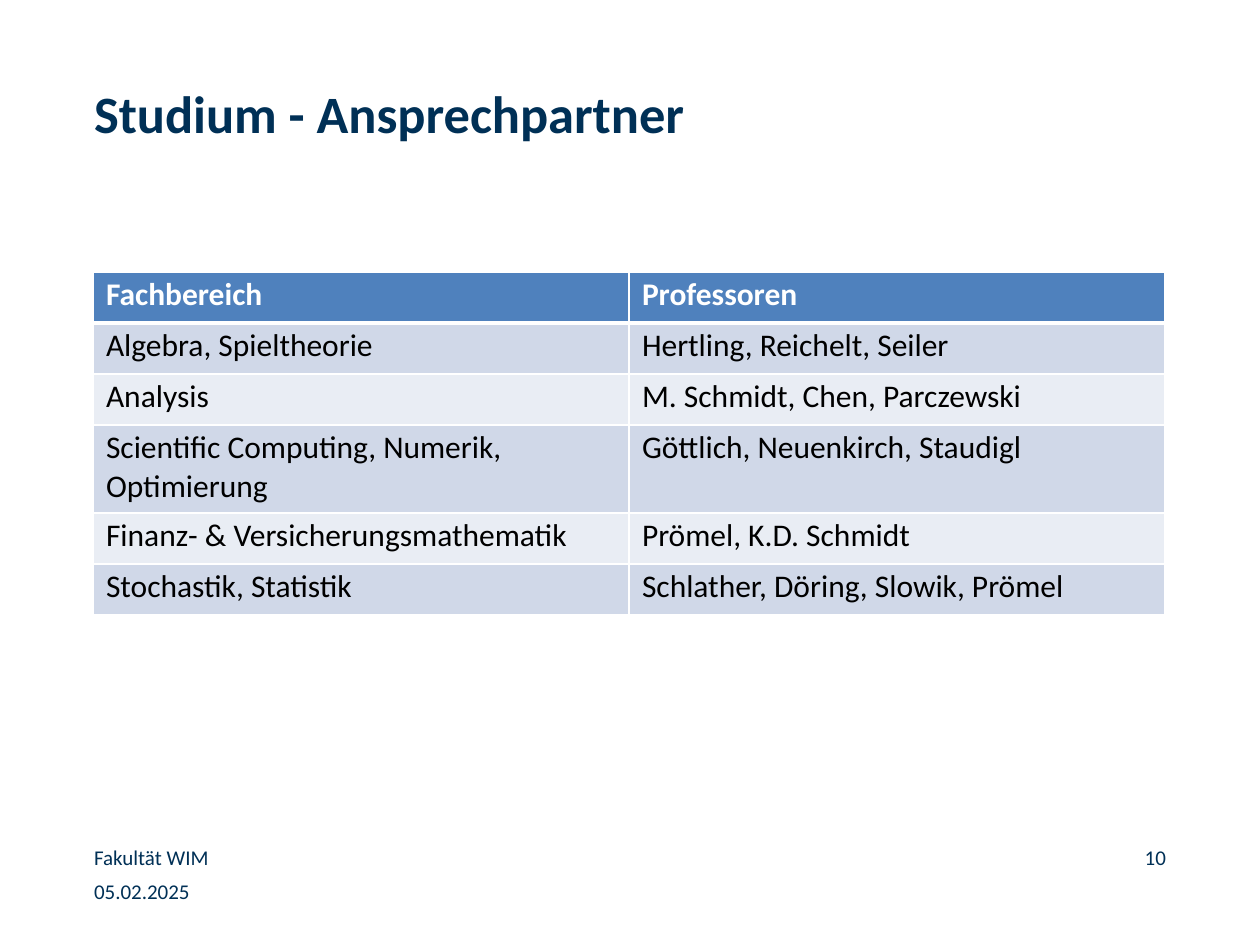
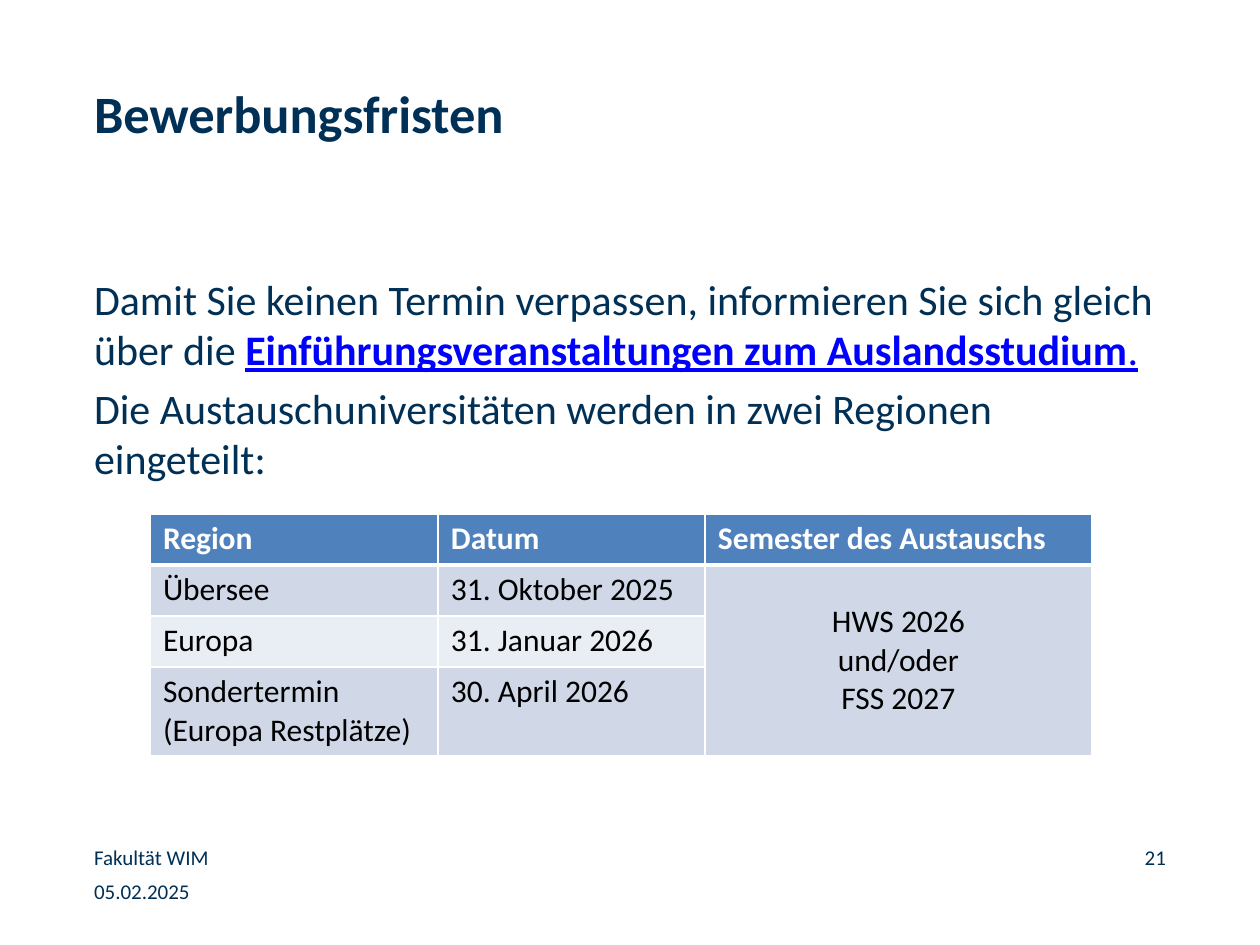
import pptx
import pptx.dml.color
import pptx.enum.text
import pptx.oxml
import pptx.oxml.ns
import pptx.util

RGBColor = pptx.dml.color.RGBColor
Align = pptx.enum.text.PP_ALIGN
Anchor = pptx.enum.text.MSO_ANCHOR
Pt = pptx.util.Pt

PX = 914400 / 126
FONT = "Calibri"
NAVY = RGBColor(0x00, 0x30, 0x56)
LINK_BLUE = RGBColor(0x00, 0x00, 0xFF)
HEADER_BLUE = RGBColor(0x4F, 0x81, 0xBD)
BAND_DARK = RGBColor(0xD0, 0xD8, 0xE8)
BAND_LIGHT = RGBColor(0xE9, 0xED, 0xF4)
WHITE = RGBColor(0xFF, 0xFF, 0xFF)
BLACK = RGBColor(0x00, 0x00, 0x00)

TITLE = {"size": Pt(30), "bold": True, "color": NAVY}
BODY = {"size": Pt(24), "color": NAVY}
LINK = {"size": Pt(24), "color": LINK_BLUE, "underline": True}
FOOTER = {"size": Pt(12), "color": NAVY}
HEADER_CELL = {"size": Pt(18), "bold": True, "color": WHITE}
BODY_CELL = {"size": Pt(18), "bold": False, "color": BLACK}

TITLE_AREA = (94, 81, 755, 157)
BODY_AREA = (94, 273, 1071, 528)
FACULTY_AREA = (94, 845, 399, 25)
DATE_AREA = (94, 879, 294, 25)
NUMBER_AREA = (1021, 845, 145, 25)

CONTACTS = [
    ("Fachbereich", "Professoren"),
    ("Algebra, Spieltheorie", "Hertling, Reichelt, Seiler"),
    ("Analysis", "M. Schmidt, Chen, Parczewski"),
    ("Scientific Computing, Numerik, Optimierung", "Göttlich, Neuenkirch, Staudigl"),
    ("Finanz- & Versicherungsmathematik", "Prömel, K.D. Schmidt"),
    ("Stochastik, Statistik", "Schlather, Döring, Slowik, Prömel"),
]
DEADLINES = [
    ("Region", "Datum", "Semester des Austauschs"),
    ("Übersee", "31. Oktober 2025", "HWS 2026\vund/oder\vFSS 2027"),
    ("Europa", "31. Januar 2026", ""),
    ("Sondertermin (Europa Restplätze)", "30. April 2026", ""),
]
DEADLINE_INTRO = [
    [("Damit Sie keinen Termin verpassen, informieren Sie sich gleich über die ", BODY),
     ("Einführungsveranstaltungen zum Auslandsstudium", {**LINK, "bold": True}),
     (".", LINK)],
    [("Die Austauschuniversitäten werden in zwei Regionen eingeteilt:", BODY)],
]


def px(length):
    """Turn px into EMU."""
    return pptx.util.Emu(round(length * PX))


def set_all(target, values):
    """Set every attribute named in values."""
    for name, value in values.items():
        setattr(target, name, value)


def style_run(run, style):
    """Give a run the shared font and its own style."""
    run.font.name = FONT
    run.font.color.rgb = style["color"]
    set_all(run.font, {name: value for name, value in style.items() if name != "color"})


def place(area, box):
    """Move a text shape to its area and clear its insets."""
    set_all(area, dict(zip(("left", "top", "width", "height"), map(px, box))))
    set_all(area.text_frame, {
        "margin_left": 0, "margin_top": 0, "margin_right": 0, "margin_bottom": 0,
        "word_wrap": True, "vertical_anchor": Anchor.TOP,
        "auto_size": pptx.enum.text.MSO_AUTO_SIZE.NONE,
    })


def write_line(area, text, style, alignment=Align.LEFT):
    """Write one styled line into a text shape."""
    line = area.text_frame.paragraphs[0]
    line.alignment = alignment
    run = line.add_run()
    run.text = text
    style_run(run, style)


def add_slide(deck, layout, title, number):
    """Add a slide with its title and footer."""
    slide = deck.slides.add_slide(deck.slide_layouts[layout])
    place(slide.shapes.title, TITLE_AREA)
    write_line(slide.shapes.title, title, TITLE)
    for text, box, alignment in (
        ("05.02.2025", DATE_AREA, Align.LEFT),
        ("Fakultät WIM", FACULTY_AREA, Align.LEFT),
        (number, NUMBER_AREA, Align.RIGHT),
    ):
        footer = slide.shapes.add_textbox(0, 0, 0, 0)
        place(footer, box)
        write_line(footer, text, FOOTER, alignment)
    return slide


def fill_body(body, paragraphs):
    """Fill the body placeholder with unbulleted paragraphs."""
    place(body, BODY_AREA)
    for index, parts in enumerate(paragraphs):
        paragraph = body.text_frame.add_paragraph() if index else body.text_frame.paragraphs[0]
        properties = paragraph._p.get_or_add_pPr()
        properties.set("marL", "0")
        properties.set("indent", "0")
        properties.append(pptx.oxml.parse_xml(f'<a:buNone {pptx.oxml.ns.nsdecls("a")}/>'))
        paragraph.space_before = Pt(4.8 if index else 0)
        for text, style in parts:
            run = paragraph.add_run()
            run.text = text
            style_run(run, style)


def add_borders(cell, top, bottom):
    """Draw white cell borders, with top and bottom widths in points."""
    for side, width in (("L", 1), ("R", 1), ("T", top), ("B", bottom)):
        cell._tc.get_or_add_tcPr().append(pptx.oxml.parse_xml(
            f'<a:ln{side} {pptx.oxml.ns.nsdecls("a")} w="{Pt(width)}">'
            f'<a:solidFill><a:srgbClr val="{WHITE}"/></a:solidFill></a:ln{side}>'))


def add_banded_table(slide, rows, corner, widths, heights, margins):
    """Add a table with a header row and alternating bands."""
    frame = slide.shapes.add_table(
        len(rows), len(widths), *map(px, (*corner, sum(widths), sum(heights))))
    table = frame.table
    for column, width in zip(table.columns, widths):
        column.width = px(width)
    for index, (row, height, texts) in enumerate(zip(table.rows, heights, rows)):
        row.height = px(height)
        band = BAND_DARK if index % 2 else BAND_LIGHT
        for cell, text in zip(row.cells, texts):
            add_borders(cell, 3 if index == 1 else 1, 1 if index else 3)
            cell.fill.solid()
            cell.fill.fore_color.rgb = band if index else HEADER_BLUE
            set_all(cell, {name: px(value) for name, value in margins.items()})
            cell.text_frame.paragraphs[0].text = text
            for run in cell.text_frame.paragraphs[0].runs:
                style_run(run, BODY_CELL if index else HEADER_CELL)
    return table


def main():
    """Build the deck."""
    deck = pptx.Presentation()
    set_all(deck, {"slide_width": px(1260), "slide_height": px(945)})

    contacts = add_slide(deck, 5, "Studium - Ansprechpartner", "10")
    add_banded_table(
        contacts, CONTACTS, (93, 272), (536, 536), (51, 51, 51, 88, 51, 51),
        {"margin_left": 13, "margin_top": 4, "margin_right": 0, "margin_bottom": 0})

    deadlines = add_slide(deck, 1, "Bewerbungsfristen", "21")
    fill_body(deadlines.placeholders[1], DEADLINE_INTRO)
    dates = add_banded_table(
        deadlines, DEADLINES, (150, 514), (288, 267, 387), (51, 51, 51, 89),
        {"margin_left": 13, "margin_top": 6, "margin_right": 13, "margin_bottom": 6})
    semester = dates.cell(1, 2)
    semester.merge(dates.cell(3, 2))
    semester.vertical_anchor = Anchor.MIDDLE
    semester.text_frame.paragraphs[0].alignment = Align.CENTER

    deck.save("out.pptx")


if __name__ == "__main__":
    main()
